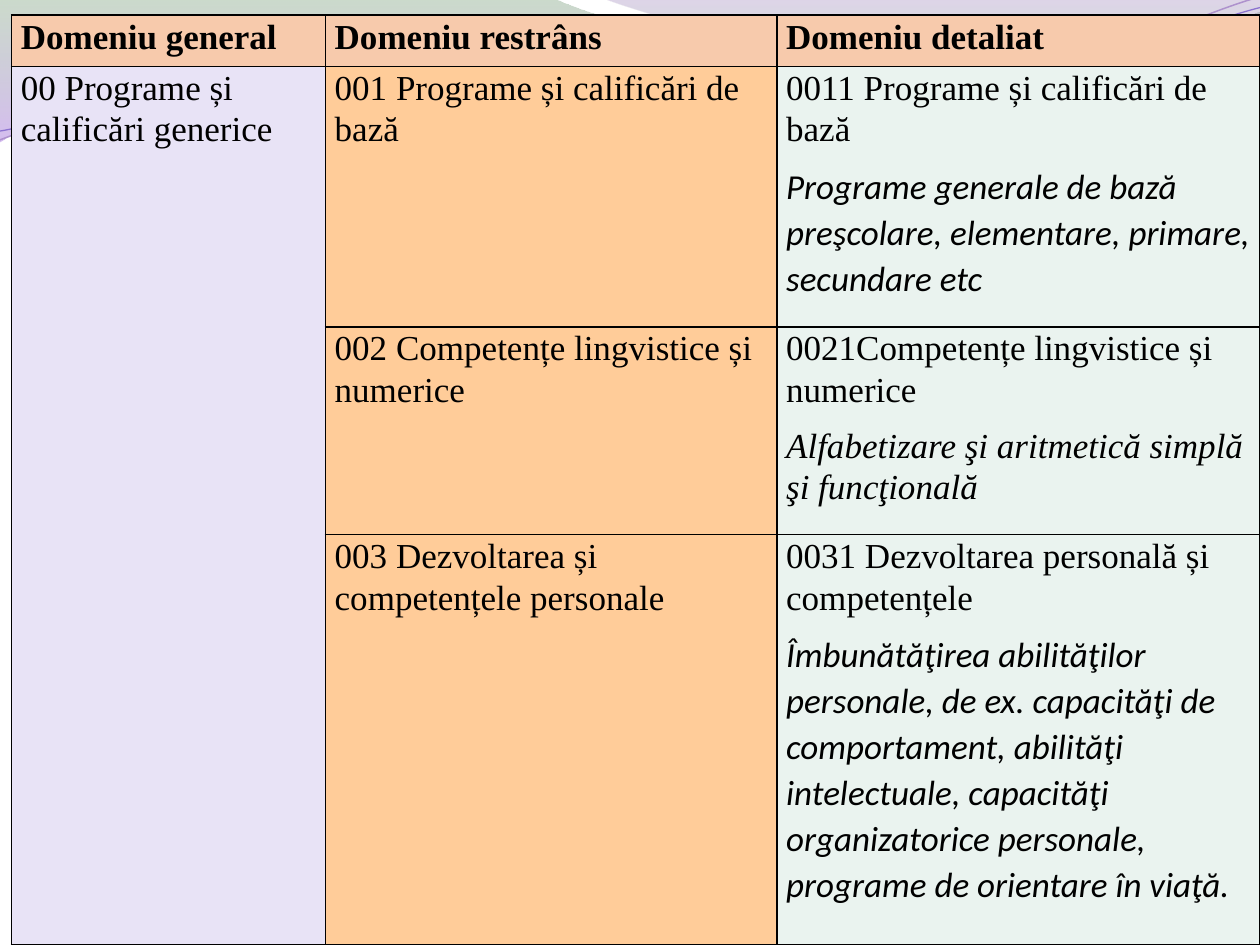
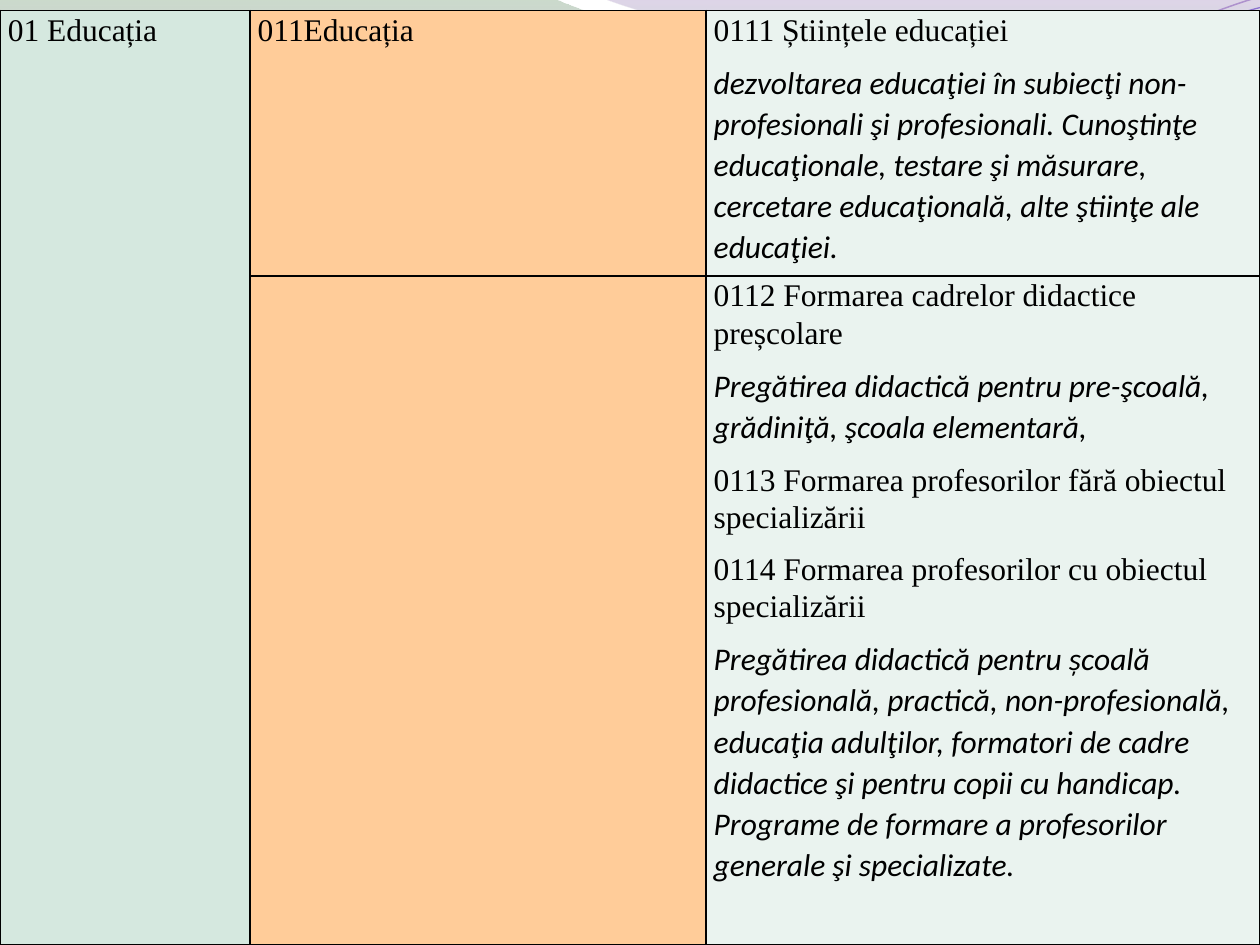
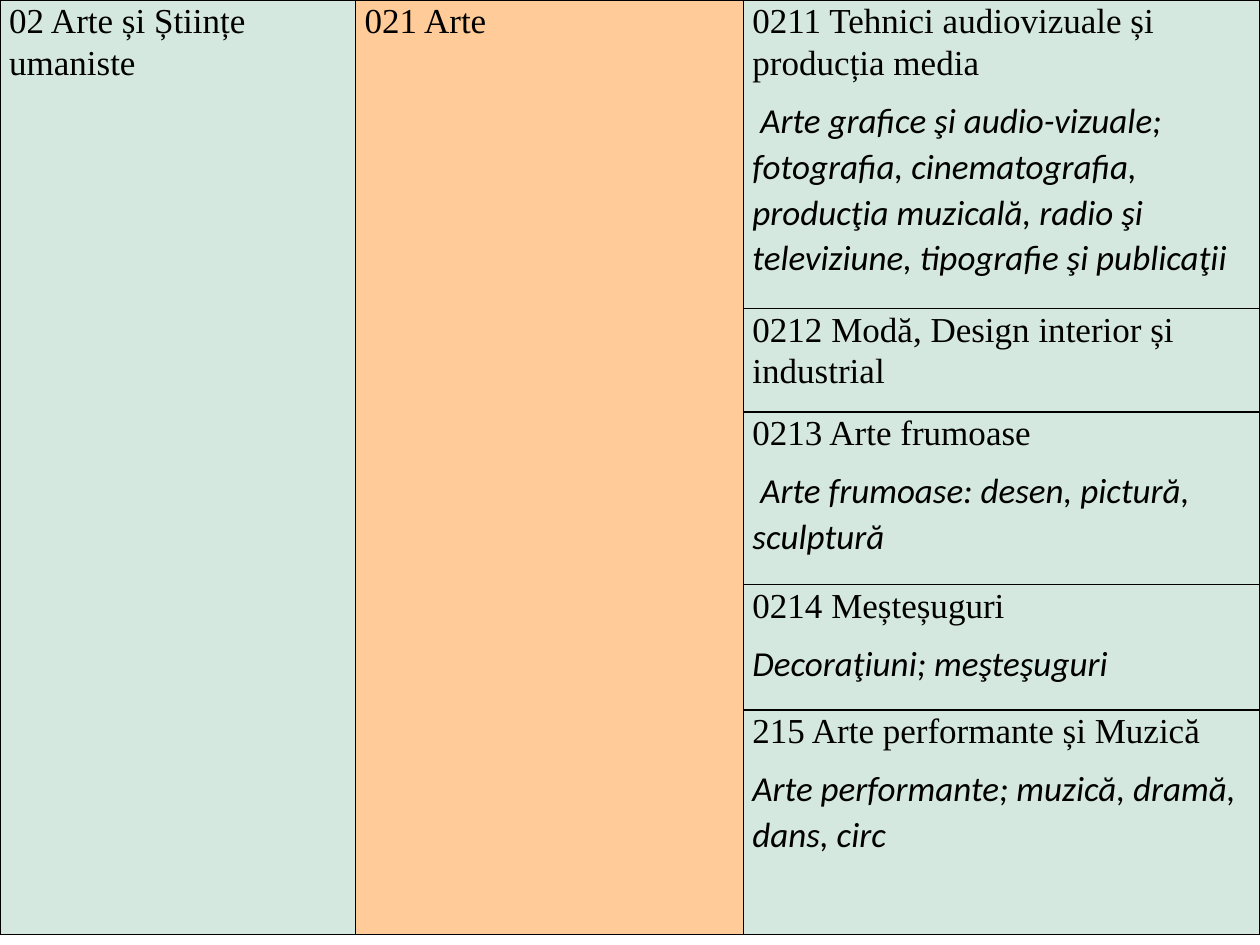
from dataclasses import dataclass
from math import cos, radians, sin
from lxml.etree import SubElement
from pptx import Presentation
from pptx.dml.color import RGBColor
from pptx.oxml import parse_xml
from pptx.oxml.ns import nsdecls, qn
from pptx.util import Pt


@dataclass(frozen=True)
class Theme:
    black: str = "000000"
    header: str = "F7CAAC"
    lilac: str = "E8E3F6"
    orange: str = "FFCC99"
    mint: str = "D5E8DF"
    pale_mint: str = "EAF3EF"
    serif: str = "Times New Roman"
    sans: str = "Calibri"
    large: int = 20
    medium: int = 18
    border: float = 1
    line_spacing: float = 1.07
    space_after: int = 8


T = Theme()
WIDTH, HEIGHT = 720, 540
STRAND_TILT = -2.7
PLAIN = (T.serif, False, False)
BOLD = (T.serif, True, False)
NOTE = (T.sans, False, True)
SERIF_NOTE = (T.serif, False, True)

GREEN_WAVE = [
    (0, 0), (4.4, -0.01),
    (4.76, 0.17, 6.64, 0.63, 7.58, 0.63), (8.53, 0.63, 9.58, 0.26, 10, 0.09),
    (10.01, 0.36),
    (9.83, 0.44, 8.7, 0.76, 7.46, 0.75), (6.22, 0.75, 3.82, 0.28, 2.57, 0.34),
    (1.29, 0.36, 0.46, 0.83, -0.01, 1.13), (0, 0),
]
PURPLE_WAVE = [
    (4.79, -0.01),
    (5.09, 0.11, 6.82, 0.62, 7.69, 0.65), (8.56, 0.69, 9.61, 0.32, 10, 0.21),
    (10, 0), (4.79, -0.01),
]
UPPER_STRAND = [
    (0, 1.11), (0.48, 0.93, 1.58, 0.57, 2.77, 0.52),
    (3.95, 0.47, 5.93, 0.89, 7.13, 0.8), (8.33, 0.71, 9.38, 0.15, 9.98, -0.02),
]
LOWER_STRAND = [
    (0, 1.04), (0.47, 0.96, 1.64, 0.61, 2.83, 0.56),
    (4.03, 0.51, 5.97, 0.84, 7.17, 0.75), (8.36, 0.67, 9.41, 0.21, 10, 0.06),
]
WAVES = [
    (GREEN_WAVE, [(0, "8DAE8E", 45), (1, "B286E3", 55)]),
    (PURPLE_WAVE, [(0, "9173B3", 30), (0.8, "A4D3A7", 45)]),
]
STRANDS = [
    (UPPER_STRAND, (4.99, 0.575), "AE92CD", 0.85),
    (LOWER_STRAND, (4.995, 0.59), "8C73D0", 0.75),
]


def rgb(color):
    return RGBColor.from_string(color)


def turn(segment, center, degrees):
    cx, cy = center
    c, n = cos(radians(degrees)), sin(radians(degrees))
    turned = []
    for x, y in zip(segment[::2], segment[1::2]):
        turned += [cx + (x - cx) * c - (y - cy) * n, cy + (x - cx) * n + (y - cy) * c]
    return turned


def add_curve(s, box, segments, close):
    left, top, width = box
    unit = width / 10
    points = [(Pt(left + x * unit), Pt(top + y * unit))
              for segment in segments for x, y in zip(segment[::2], segment[1::2])]
    builder = s.shapes.build_freeform(*points[0])
    builder.add_line_segments(points[1:], close=close)
    sp = builder.convert_to_shape()
    sp.shadow.inherit = False
    lines = list(sp.element.iter(qn("a:lnTo")))
    for segment in segments[1:]:
        count = len(segment) // 2
        group, lines = lines[:count], lines[count:]
        if count == 3:
            bezier = parse_xml(f'<a:cubicBezTo {nsdecls("a")}/>')
            group[0].addprevious(bezier)
            for line in group:
                bezier.append(line[0])
                line.getparent().remove(line)
    return sp


def add_waves(s, box):
    shapes = []
    for segments, stops in WAVES:
        sp = add_curve(s, box, segments, True)
        sp.line.fill.background()
        sp.fill.gradient()
        sp.fill.gradient_angle = 270
        for stop, (position, color, opacity) in zip(sp.fill.gradient_stops, stops):
            stop.position = position
            stop.color.rgb = rgb(color)
        colors = list(sp.element.spPr.iter(qn("a:srgbClr")))
        for node, (position, color, opacity) in zip(colors, stops):
            SubElement(node, qn("a:alpha"), val=str(opacity * 1000))
        shapes.append(sp)
    for segments, center, color, weight in STRANDS:
        level = [turn(segment, center, -STRAND_TILT) for segment in segments]
        sp = add_curve(s, box, level, False)
        sp.rotation = STRAND_TILT
        sp.fill.background()
        sp.line.color.rgb = rgb(color)
        sp.line.width = Pt(weight)
        shapes.append(sp)
    return shapes


def move_to_master(prs, shapes):
    tree = prs.slide_master.shapes.element
    for i, sp in enumerate(shapes):
        sp.element.nvSpPr.cNvPr.set("id", str(100 + i))
        tree.insert(2 + i, sp.element)


def add_borders(cell):
    tcPr = cell._tc.get_or_add_tcPr()
    for i, side in enumerate(("lnL", "lnR", "lnT", "lnB")):
        tcPr.insert(i, parse_xml(
            f'<a:{side} {nsdecls("a")} w="{Pt(T.border)}"><a:solidFill>'
            f'<a:srgbClr val="{T.black}"/></a:solidFill></a:{side}>'))


def format_cell(cell, fill, inset):
    cell.fill.solid()
    cell.fill.fore_color.rgb = rgb(fill)
    cell.margin_left = cell.margin_right = Pt(inset)
    cell.margin_top = cell.margin_bottom = 0
    add_borders(cell)


def write_cell(cell, content, size):
    tf = cell.text_frame
    tf.text = "\n".join(text for text, style in content)
    for p, (text, (font, bold, italic)) in zip(tf.paragraphs, content):
        p.line_spacing = T.line_spacing
        p.space_after = Pt(T.space_after)
        for r in p.runs:
            r.font.name = font
            r.font.size = Pt(size)
            r.font.bold = bold
            r.font.italic = italic
            r.font.color.rgb = rgb(T.black)


def add_domain_table(s, box, widths, heights, columns, size, inset, header=()):
    left, top = box
    frame = s.shapes.add_table(len(heights), len(widths), Pt(left), Pt(top),
                               Pt(sum(widths)), Pt(sum(heights)))
    table = frame.table
    table.first_row = table.horz_banding = False
    for row, height in zip(table.rows, heights):
        row.height = Pt(height)
    first = 1 if header else 0
    last = len(heights) - 1
    for j, (width, (fill, cells)) in enumerate(zip(widths, columns)):
        table.columns[j].width = Pt(width)
        for i in range(len(heights)):
            format_cell(table.cell(i, j), T.header if i < first else fill, inset)
        if header:
            write_cell(table.cell(0, j), [(header[j], BOLD)], size)
        for i, content in enumerate(cells, first):
            write_cell(table.cell(i, j), content, size)
        if len(cells) == 1 and last > first:
            table.cell(first, j).merge(table.cell(last, j))


GENERIC = dict(
    box=(6.6, 8.6), widths=(179.4, 258, 276), heights=(29.3, 149, 118.6, 234.6),
    size=T.large, inset=5.3,
    header=("Domeniu general", "Domeniu restrâns", "Domeniu detaliat"),
    columns=[
        (T.lilac, [[("00 Programe și calificări generice", PLAIN)]]),
        (T.orange, [
            [("001 Programe și calificări de bază", PLAIN)],
            [("002 Competențe lingvistice și numerice", PLAIN)],
            [("003 Dezvoltarea și competențele personale", PLAIN)],
        ]),
        (T.pale_mint, [
            [("0011 Programe și calificări de bază", PLAIN),
             ("Programe generale de bază preşcolare, elementare, primare, "
              "secundare etc", NOTE)],
            [("0021Competențe lingvistice și numerice", PLAIN),
             ("Alfabetizare şi aritmetică simplă şi funcţională", SERIF_NOTE)],
            [("0031 Dezvoltarea personală și competențele", PLAIN),
             ("Îmbunătăţirea abilităţilor personale, de ex. capacităţi de "
              "comportament, abilităţi intelectuale, capacităţi organizatorice "
              "personale, programe de orientare în viaţă.", NOTE)],
        ]),
    ])

EDUCATION = dict(
    box=(0, 6), widths=(142.8, 260.6, 316.6), heights=(151.8, 382.2),
    size=T.medium, inset=4.5,
    columns=[
        (T.mint, [[("01 Educația", PLAIN)]]),
        (T.orange, [[("011Educația", PLAIN)], []]),
        (T.pale_mint, [
            [("0111 Științele educației", PLAIN),
             ("dezvoltarea educaţiei în subiecţi non-profesionali şi profesionali. "
              "Cunoştinţe educaţionale, testare şi măsurare, cercetare "
              "educaţională, alte ştiinţe ale educaţiei.", NOTE)],
            [("0112 Formarea cadrelor didactice preșcolare", PLAIN),
             ("Pregătirea didactică pentru pre-şcoală, grădiniţă, şcoala "
              "elementară,", NOTE),
             ("0113 Formarea profesorilor fără obiectul specializării", PLAIN),
             ("0114 Formarea profesorilor cu obiectul specializării", PLAIN),
             ("Pregătirea didactică pentru școală profesională, practică, "
              "non-profesională, educaţia adulţilor, formatori de cadre didactice "
              "şi pentru copii cu handicap. Programe de formare a profesorilor "
              "generale şi specializate.", NOTE)],
        ]),
    ])

ARTS = dict(
    box=(0, 0), widths=(203.2, 221.6, 295.2), heights=(176.2, 59.2, 98.6, 71.8, 128.4),
    size=T.large, inset=5.2,
    columns=[
        (T.mint, [[("02 Arte și Științe umaniste", PLAIN)]]),
        (T.orange, [[("021 Arte", PLAIN)]]),
        (T.mint, [
            [("0211 Tehnici audiovizuale și producția media", PLAIN),
             (" Arte grafice şi audio-vizuale; fotografia, cinematografia, "
              "producţia muzicală, radio şi televiziune, tipografie şi "
              "publicaţii", NOTE)],
            [("0212 Modă, Design interior și industrial", PLAIN)],
            [("0213 Arte frumoase", PLAIN),
             (" Arte frumoase: desen, pictură, sculptură", NOTE)],
            [("0214 Meșteșuguri", PLAIN), ("Decoraţiuni; meşteşuguri", NOTE)],
            [("215 Arte performante și Muzică", PLAIN),
             ("Arte performante; muzică, dramă, dans, circ", NOTE)],
        ]),
    ])


def main():
    prs = Presentation()
    prs.slide_width, prs.slide_height = Pt(WIDTH), Pt(HEIGHT)
    for i, domain in enumerate((GENERIC, EDUCATION, ARTS)):
        s = prs.slides.add_slide(prs.slide_layouts[6])
        if i == 0:
            move_to_master(prs, add_waves(s, (0, 0, WIDTH)))
        add_domain_table(s, **domain)
    prs.save("out.pptx")


if __name__ == "__main__":
    main()
